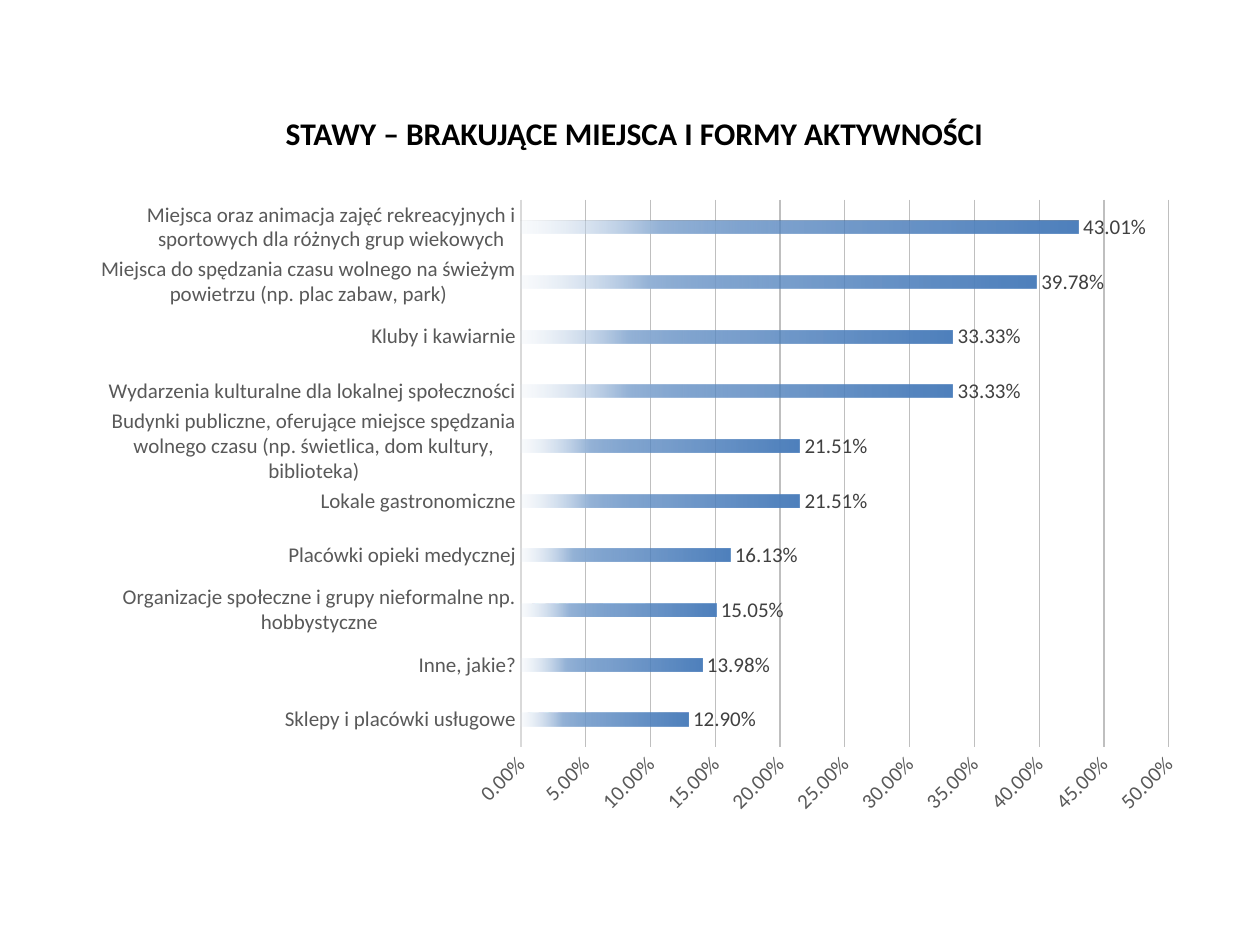
from lxml import etree
from pptx import Presentation
from pptx import util as u
from pptx.chart.data import CategoryChartData
from pptx.dml.color import RGBColor
from pptx.enum import chart as ch
from pptx.enum import text
from pptx.oxml import parse_xml
from pptx.oxml.ns import nsdecls, qn

THEME = {
    "font": "Calibri", "title_size": 18, "label_size": 12, "base_size": 10,
    "black": "000000", "axis_text": "595959", "value_text": "404040",
    "axis_line": "D9D9D9", "grid": "BFBFBF",
    # position %, colour, opacity %
    "bar_stops": [(0, "4F81BD", 100), (51, "4F81BD", 75),
                  (75, "95B3D7", 100), (100, "DCE6F2", 15)],
}
ANSWERS = [
    ("Sklepy i placówki usługowe", 0.129),
    ("Inne, jakie?", 0.1398),
    ("Organizacje społeczne i grupy nieformalne np.\nhobbystyczne", 0.1505),
    ("Placówki opieki medycznej", 0.1613),
    ("Lokale gastronomiczne", 0.2151),
    ("Budynki publiczne, oferujące miejsce spędzania\n"
     "wolnego czasu (np. świetlica, dom kultury,\nbiblioteka)", 0.2151),
    ("Wydarzenia kulturalne dla lokalnej społeczności", 0.3333),
    ("Kluby i kawiarnie", 0.3333),
    ("Miejsca do spędzania czasu wolnego na świeżym\n"
     "powietrzu (np. plac zabaw, park)", 0.3978),
    ("Miejsca oraz animacja zajęć rekreacyjnych i\n"
     "sportowych dla różnych grup wiekowych", 0.4301),
]


def px(length):
    return u.Emu(round(length * 914400 / 126))


def style_font(font, size, colour, bold=False):
    font.name = THEME["font"]
    font.size = u.Pt(size)
    font.bold = bold
    font.color.rgb = RGBColor.from_string(colour)


presentation = Presentation()
presentation.slide_width, presentation.slide_height = px(1260), px(945)
slide = presentation.slides.add_slide(presentation.slide_layouts[5])

# Title
title = slide.shapes.title
title.left, title.top, title.width, title.height = px(39), px(108), px(1191), px(51)
frame = title.text_frame
frame.word_wrap = True
frame.vertical_anchor = text.MSO_ANCHOR.TOP
paragraph = frame.paragraphs[0]
paragraph.alignment = text.PP_ALIGN.CENTER
run = paragraph.add_run()
run.text = "STAWY – BRAKUJĄCE MIEJSCA I FORMY AKTYWNOŚCI"
style_font(run.font, THEME["title_size"], THEME["black"], bold=True)

# Bar chart
data = CategoryChartData(number_format="0.00%")
data.categories = [name for name, share in ANSWERS]
data.add_series("Series 1", [share for name, share in ANSWERS])
left, top, width, height = 78, 186, 1123, 640
chart = slide.shapes.add_chart(ch.XL_CHART_TYPE.BAR_CLUSTERED, px(left), px(top),
                               px(width), px(height), data).chart
chart.has_legend = False
chart.has_title = False
style_font(chart.font, THEME["base_size"], THEME["black"])

# Axes
category_axis, value_axis = chart.category_axis, chart.value_axis
for axis in (category_axis, value_axis):
    axis.major_tick_mark = axis.minor_tick_mark = ch.XL_TICK_MARK.NONE
    style_font(axis.tick_labels.font, THEME["label_size"], THEME["axis_text"])
category_axis.format.line.color.rgb = RGBColor.from_string(THEME["axis_line"])
category_axis.format.line.width = u.Pt(1.5)
value_axis.format.line.fill.background()
value_axis.minimum_scale, value_axis.maximum_scale = 0, 0.5
value_axis.major_unit = 0.05
value_axis.tick_labels.number_format = "0.00%"
value_axis.tick_labels.number_format_is_linked = False
value_axis.has_major_gridlines = True
grid_line = value_axis.major_gridlines.format.line
grid_line.color.rgb = RGBColor.from_string(THEME["grid"])
grid_line.width = u.Pt(0.75)

# Percentages slanted by 45 degrees
value_body = value_axis._element.find(qn("c:txPr")).find(qn("a:bodyPr"))
value_body.set("rot", "-2700000")
value_body.set("vert", "horz")

# Bars fading out to the left
plot = chart.plots[0]
plot.gap_width, plot.overlap = 326, -58
plot.vary_by_categories = False
series = plot.series[0]
series.invert_if_negative = False
series.format.fill.solid()
stops = "".join(
    f'<a:gs pos="{position * 1000}"><a:srgbClr val="{colour}">'
    f'<a:alpha val="{opacity * 1000}"/></a:srgbClr></a:gs>'
    for position, colour, opacity in THEME["bar_stops"])
gradient = parse_xml(f'<a:gradFill {nsdecls("a")}><a:gsLst>{stops}</a:gsLst>'
                     '<a:lin ang="10800000" scaled="0"/></a:gradFill>')
solid = series.format.fill._xPr.find(qn("a:solidFill"))
solid.getparent().replace(solid, gradient)
series.format.line.fill.background()

# Value labels
labels = series.data_labels
labels.show_value = True
labels.number_format = "0.00%"
labels.number_format_is_linked = False
labels.position = ch.XL_LABEL_POSITION.OUTSIDE_END
style_font(labels.font, THEME["label_size"], THEME["value_text"])

# Plot area inside the axes
plot_area = chart._chartSpace.chart.plotArea
for old_layout in plot_area.findall(qn("c:layout")):
    plot_area.remove(old_layout)
layout = etree.Element(qn("c:layout"))
manual = etree.SubElement(layout, qn("c:manualLayout"))
for tag, value in [("layoutTarget", "inner"), ("xMode", "edge"), ("yMode", "edge"),
                   ("x", (521 - left) / width), ("y", (200 - top) / height),
                   ("w", 648 / width), ("h", 547 / height)]:
    etree.SubElement(manual, qn(f"c:{tag}")).set("val", str(value))
plot_area.insert(0, layout)

presentation.save("out.pptx")
